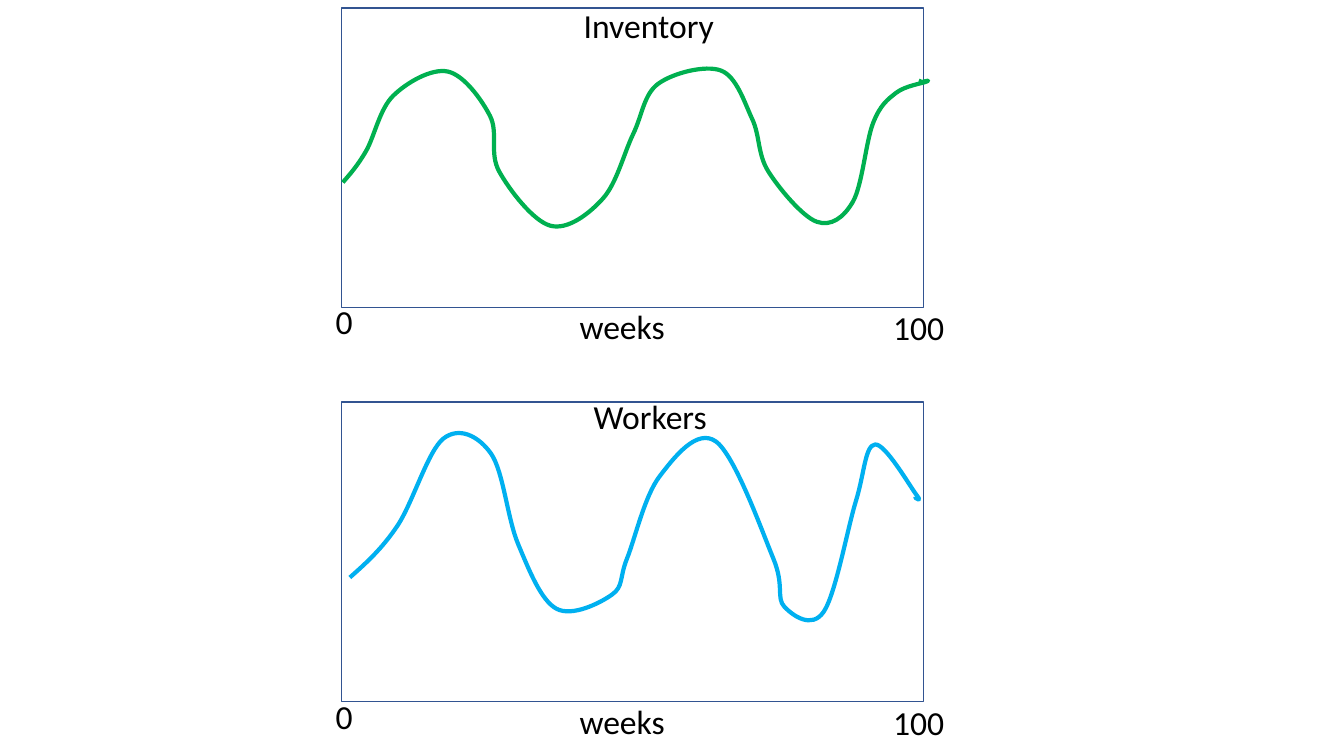
from dataclasses import dataclass

from lxml.etree import SubElement
from pptx import Presentation
from pptx.dml.color import RGBColor as Rgb
from pptx.enum.shapes import MSO_SHAPE as Kind
from pptx.enum.text import MSO_AUTO_SIZE as Fit
from pptx.oxml.ns import qn
from pptx.shapes.group import GroupShape as Group
from pptx.util import Inches, Pt

# The grid has square cells, a hundredth of an inch wide
CELL = Inches(0.01)
COLS, ROWS = 1333, 750
STEP = 391  # rows from one panel to the next
COLORS = {"frame": "325491", "stock": "00B050", "staff": "00B0F0", "text": "000000"}
FONT = {"name": "Calibri", "size": Pt(24)}
BODY = {"word_wrap": False, "auto_size": Fit.SHAPE_TO_FIT_TEXT}

Point = tuple[float, float]


@dataclass
class Label:
    text: str
    col: int
    row: int
    cols: int
    rows: int = 50


@dataclass
class Panel:
    title: Label
    color: str
    knots: list[Point]


# Axis labels, placed as in the top panel
AXIS = [
    Label("weeks", 565, 299, 106),
    Label("0", 323, 294, 37),
    Label("100", 876, 300, 71),
]

PANELS = [
    Panel(Label("Inventory", 569, 0, 151), "stock", [
        (340, 181), (363, 150), (390, 95), (444, 71), (486, 115), (495, 170),
        (546, 224), (598, 197), (628, 133), (653, 83), (715, 70), (746, 118),
        (762, 170), (810, 220), (846, 200), (866, 122), (889, 92), (919, 81),
        (916, 81), (913, 82), (914, 79)]),
    Panel(Label("Workers", 579, 388, 134), "staff", [
        (347, 573), (394, 522), (440, 435), (487, 450), (514, 540), (552, 604),
        (607, 590), (622, 554), (654, 473), (710, 438), (767, 554), (778, 602),
        (817, 607), (849, 497), (868, 441), (909, 491), (908, 494), (908, 493)]),
]


def apply(target: object, values: dict) -> None:
    for name, value in values.items():
        setattr(target, name, value)


def tint(name: str) -> Rgb:
    return Rgb.from_string(COLORS[name])


def outline(shape, color: str, width: float) -> None:
    shape.shadow.inherit = False
    shape.fill.background()
    shape.line.color.rgb = tint(color)
    shape.line.width = Pt(width)


def spline(knots: list[Point]) -> list[Point]:
    """Give two handles and an end point for each piece of a smooth curve."""
    def slope(i: int) -> Point:
        (x0, y0), (x1, y1) = knots[i - 1], knots[i + 1]
        return (x1 - x0) / 6, (y1 - y0) / 6

    def mid(a: Point, b: Point) -> Point:
        return (a[0] + b[0]) / 2, (a[1] + b[1]) / 2

    last = len(knots) - 1
    ahead, back = {}, {}
    for i in range(1, last):
        (x, y), (dx, dy) = knots[i], slope(i)
        ahead[i] = (x + dx, y + dy)
        back[i] = (x - dx, y - dy)
    ahead[0] = mid(knots[0], back[1])
    back[last] = mid(knots[last], ahead[last - 1])
    return [p for i in range(last) for p in (ahead[i], back[i + 1], knots[i + 1])]


def add_curve(group: Group, knots: list[Point], color: str) -> None:
    start, *rest = [(round(x * CELL), round(y * CELL))
                    for x, y in [knots[0], *spline(knots)]]
    build = group.shapes.build_freeform(*start)
    build.add_line_segments(rest, close=False)
    shape = build.convert_to_shape()
    outline(shape, color, 3)
    # Join every three straight pieces into one Bezier piece
    track = shape.element.xpath(".//a:path")[0]
    lines = track.findall(qn("a:lnTo"))
    for i in range(0, len(lines), 3):
        curve = SubElement(track, qn("a:cubicBezTo"))
        for line in lines[i:i + 3]:
            curve.append(line[0])
            track.remove(line)


def add_label(group: Group, label: Label, down: int = 0) -> None:
    box = group.shapes.add_textbox(label.col * CELL, (label.row + down) * CELL,
                                   label.cols * CELL, label.rows * CELL)
    apply(box.text_frame, BODY)
    run = box.text_frame.paragraphs[0].add_run()
    run.text = label.text
    apply(run.font, FONT)
    run.font.color.rgb = tint("text")


def add_panel(group: Group, panel: Panel, down: int) -> None:
    frame = group.shapes.add_shape(Kind.RECTANGLE, 339 * CELL, (8 + down) * CELL,
                                   577 * CELL, 297 * CELL)
    outline(frame, "frame", 1)
    add_curve(group, panel.knots, panel.color)
    add_label(group, panel.title)
    for label in AXIS:
        add_label(group, label, down)


def main() -> None:
    deck = Presentation()
    apply(deck, {"slide_width": COLS * CELL, "slide_height": ROWS * CELL})
    slide = deck.slides.add_slide(deck.slide_layouts[6])
    for i, panel in enumerate(PANELS):
        add_panel(slide.shapes.add_group_shape(), panel, i * STEP)
    deck.save("out.pptx")


if __name__ == "__main__":
    main()
